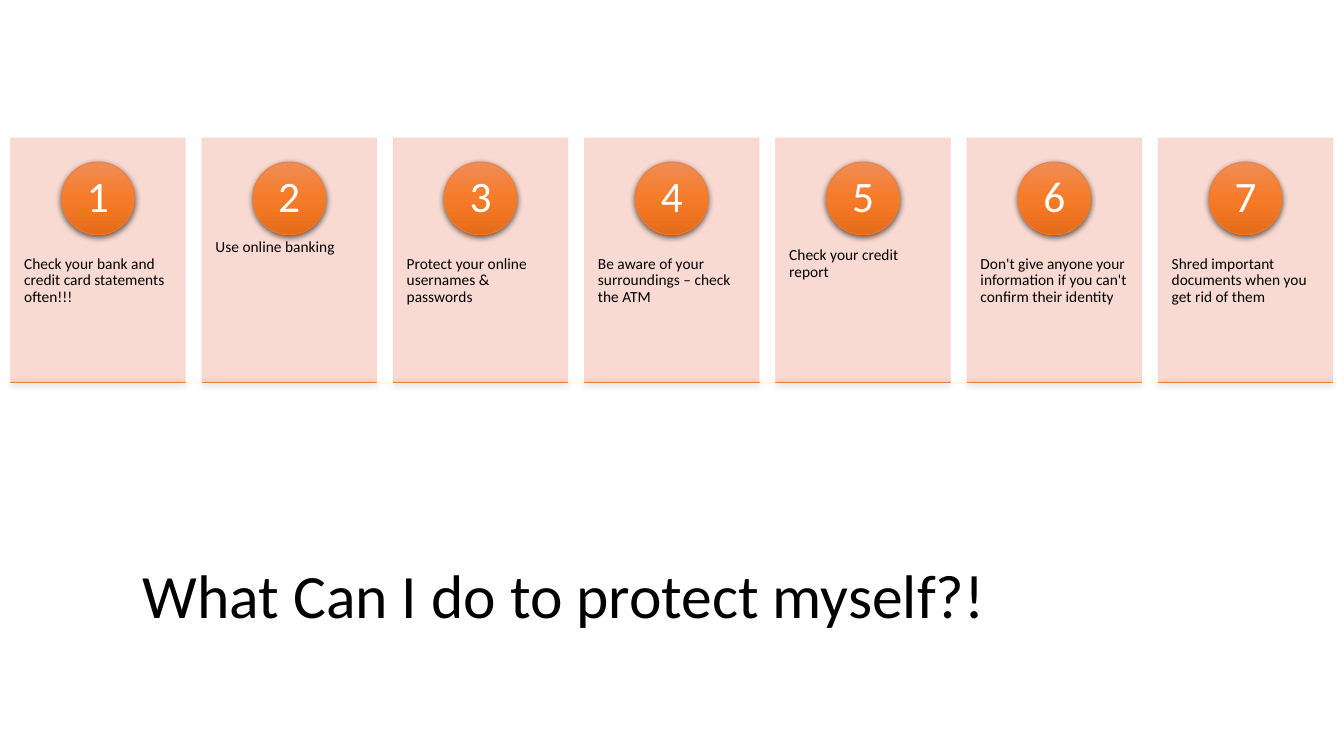
import lxml.etree
import pptx
import pptx.dml.color
import pptx.enum.dml
import pptx.enum.shapes
import pptx.enum.text
import pptx.oxml.ns
import pptx.util

Cm = pptx.util.Cm
Pt = pptx.util.Pt
Shapes = pptx.enum.shapes.MSO_SHAPE
Align = pptx.enum.text.PP_ALIGN
Anchor = pptx.enum.text.MSO_ANCHOR

COLORS = {
    "card": "F8D7CE",
    "light": "F18C57",
    "middle": "F67B28",
    "deep": "E56C19",
    "outline": "ED7D31",
    "black": "000000",
    "white": "FFFFFF",
}
TIPS = [
    "Check your bank and credit card statements often!!!",
    "Use online banking",
    "Protect your online usernames & passwords",
    "Be aware of your surroundings – check the ATM",
    "Check your credit report",
    "Don't give anyone your information if you can't confirm their identity",
    "Shred important documents when you get rid of them",
]
FIRST_LEFT, PITCH = 0.27, 4.82
CARD_TOP, CARD_WIDTH, CARD_HEIGHT = 3.48, 4.4, 6.15
BADGE_SIZE, BADGE_TOP = 1.84, 4.08
NUMBER_SIZE = 1.3


def add_xml(parent, tag, **attributes):
    return lxml.etree.SubElement(parent, pptx.oxml.ns.qn(tag), attributes)


class TipSlide:
    """Draws the cards, badges and text of one slide in a shared style."""

    font = "Calibri"
    gradient = [("0", "light"), ("50000", "middle"), ("100000", "deep")]

    def __init__(self, slide):
        self.slide = slide

    def color(self, name):
        return pptx.dml.color.RGBColor.from_string(COLORS[name])

    def shape(self, kind, left, top, width, height, outline):
        shape = self.slide.shapes.add_shape(kind, Cm(left), Cm(top), Cm(width), Cm(height))
        shape.shadow.inherit = False
        shape.line.color.rgb = self.color(outline)
        shape.line.width = Pt(0.5)
        return shape

    def card(self, left, top, width, height):
        shape = self.shape(Shapes.RECTANGLE, left, top, width, height, "card")
        shape.fill.solid()
        shape.fill.fore_color.rgb = self.color("card")
        for color in shape.element.spPr.iter(pptx.oxml.ns.qn("a:srgbClr")):
            add_xml(color, "a:alpha", val="90000")

    def glossy(self, kind, left, top, width, height):
        shape = self.shape(kind, left, top, width, height, "outline")
        shape.fill.gradient()
        shape.fill.gradient_angle = 270
        properties = shape.element.spPr
        stops = properties.find(".//" + pptx.oxml.ns.qn("a:gsLst"))
        for stop in list(stops):
            stops.remove(stop)
        for position, name in self.gradient:
            add_xml(add_xml(stops, "a:gs", pos=position), "a:srgbClr", val=COLORS[name])
        effects = properties.find(pptx.oxml.ns.qn("a:effectLst"))
        shadow = add_xml(effects, "a:outerShdw", blurRad=str(Pt(4.5)), dist=str(Pt(1.5)),
                         dir="5400000", algn="ctr", rotWithShape="0")
        add_xml(add_xml(shadow, "a:srgbClr", val=COLORS["black"]), "a:alpha", val="63000")

    def text(self, words, left, top, width, height, size, color="black",
             insets=(0.25, 0.13), anchor=Anchor.MIDDLE, align=Align.LEFT):
        box = self.slide.shapes.add_textbox(Cm(left), Cm(top), Cm(width), Cm(height))
        frame = box.text_frame
        frame.word_wrap = True
        frame.vertical_anchor = anchor
        frame.margin_left = frame.margin_right = Cm(insets[0])
        frame.margin_top = frame.margin_bottom = Cm(insets[1])
        frame.text = words
        paragraph = frame.paragraphs[0]
        paragraph.alignment = align
        paragraph.line_spacing = 0.9
        font = paragraph.runs[0].font
        font.name = self.font
        font.size = Pt(size)
        font.color.rgb = self.color(color)

    def tip(self, number, words, left):
        center = left + CARD_WIDTH / 2
        badge_middle = BADGE_TOP + BADGE_SIZE / 2
        self.card(left, CARD_TOP, CARD_WIDTH, CARD_HEIGHT)
        self.text(words, left, 5.82, CARD_WIDTH, 3.69, 11,
                  insets=(0.34, 0.91), anchor=Anchor.TOP)
        self.glossy(Shapes.OVAL, center - BADGE_SIZE / 2, BADGE_TOP, BADGE_SIZE, BADGE_SIZE)
        self.text(str(number), center - NUMBER_SIZE / 2, badge_middle - NUMBER_SIZE / 2,
                  NUMBER_SIZE, NUMBER_SIZE, 31, "white", insets=(0.15, 0.03), align=Align.CENTER)
        self.glossy(Shapes.RECTANGLE, left, CARD_TOP + CARD_HEIGHT, CARD_WIDTH, 0)


def main():
    presentation = pptx.Presentation()
    presentation.slide_width = Cm(33.87)
    presentation.slide_height = Cm(19.05)
    tips = TipSlide(presentation.slides.add_slide(presentation.slide_layouts[6]))
    tips.text("What Can I do to protect myself?!", 3.35, 12.98, 27.18, 4.19, 44)
    for index, words in enumerate(TIPS):
        tips.tip(index + 1, words, FIRST_LEFT + index * PITCH)
    presentation.save("out.pptx")


if __name__ == "__main__":
    main()
